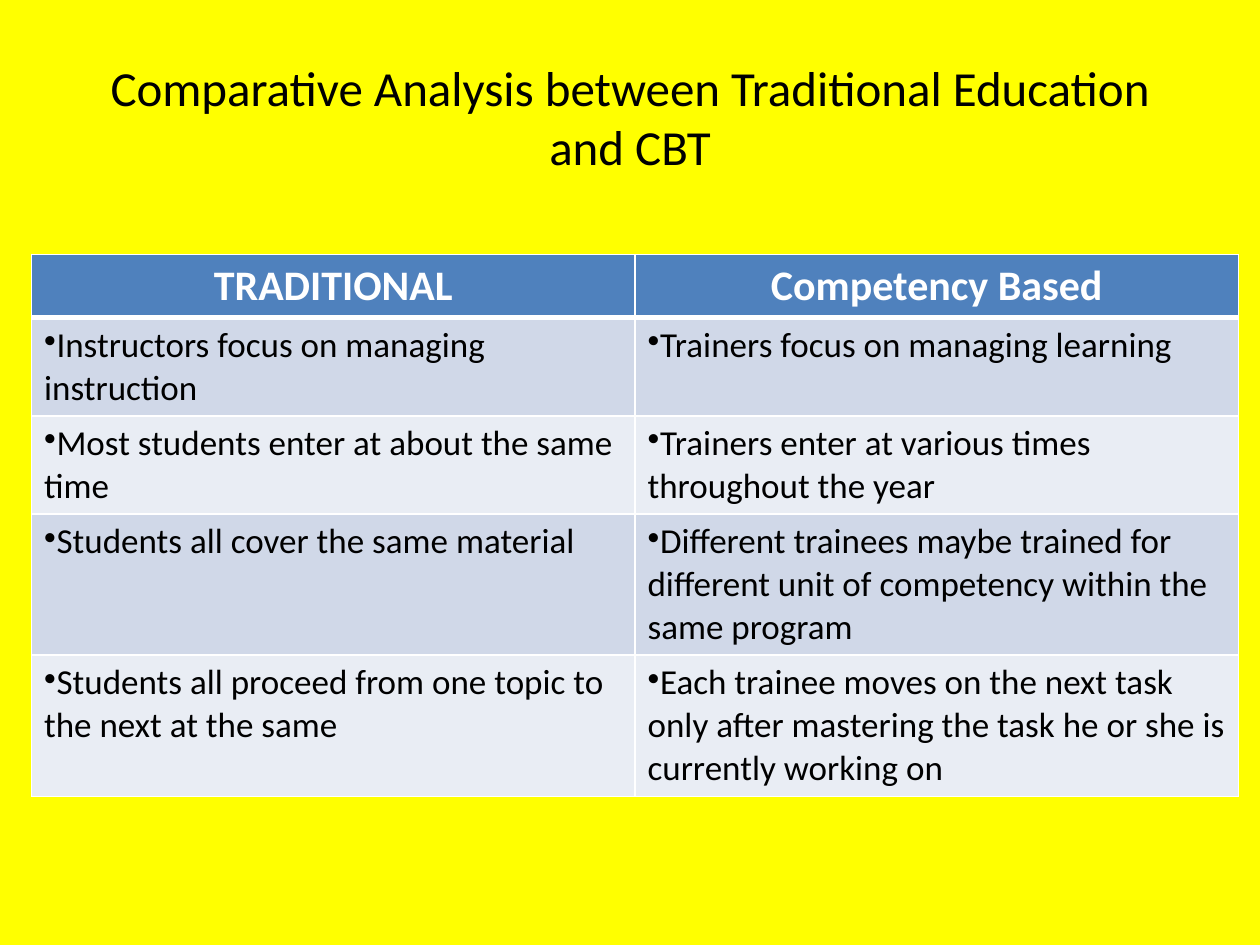
"""Build a slide comparing traditional education with competency based training."""
from lxml.etree import SubElement
from pptx import Presentation
from pptx.dml.color import RGBColor
from pptx.enum.text import MSO_ANCHOR, PP_ALIGN
from pptx.oxml.ns import qn
from pptx.util import Inches, Pt

TITLE = "Comparative Analysis between Traditional Education and CBT"
HEADINGS = ("TRADITIONAL", "Competency Based")
COMPARISONS = [
    ("Instructors focus on managing instruction",
     "Trainers focus on managing learning"),
    ("Most students enter at about the same time",
     "Trainers enter at various times throughout the year"),
    ("Students all cover the same material",
     "Different trainees maybe trained for different unit of competency within the same program"),
    ("Students all proceed from one topic to the next at the same",
     "Each trainee moves on the next task only after mastering the task he or she is currently working on"),
]
ROW_HEIGHTS = (0.5, 0.78, 0.78, 1.12, 1.12)
COLUMN_WIDTH = 4.79
YELLOW, BLACK, WHITE, BLUE = "FFFF00", "000000", "FFFFFF", "4F81BD"
BANDS = ("D0D8E8", "E9EDF4")


def paint(fill, color):
    fill.solid()
    fill.fore_color.rgb = RGBColor.from_string(color)


def write(paragraph, text, size, color, bold=False):
    run = paragraph.add_run()
    run.text = text
    run.font.name = "Calibri"
    run.font.size = Pt(size)
    run.font.bold = bold
    paint(run.font.fill, color)


def add_bullet(paragraph):
    properties = paragraph._p.get_or_add_pPr()
    properties.set("marL", "0")
    properties.set("indent", "0")
    SubElement(properties, qn("a:buChar"), char="•")


def add_borders(cell, top, bottom):
    properties = cell._tc.get_or_add_tcPr()
    for side, width in (("L", 1), ("R", 1), ("T", top), ("B", bottom)):
        line = SubElement(properties, qn(f"a:ln{side}"), w=str(Pt(width)))
        solid = SubElement(line, qn("a:solidFill"))
        SubElement(solid, qn("a:srgbClr"), val=WHITE)


def add_title(slide):
    frame = slide.shapes.add_textbox(Inches(0.5), Inches(0.3), Inches(9), Inches(1.25)).text_frame
    frame.word_wrap = True
    frame.vertical_anchor = MSO_ANCHOR.MIDDLE
    heading = frame.paragraphs[0]
    heading.alignment = PP_ALIGN.CENTER
    write(heading, TITLE, 28, BLACK)


def add_comparison(slide):
    rows = [HEADINGS, *COMPARISONS]
    table = slide.shapes.add_table(
        len(rows), len(HEADINGS), Inches(0.25), Inches(2.02),
        Inches(COLUMN_WIDTH * len(HEADINGS)), Inches(sum(ROW_HEIGHTS))).table
    for column in table.columns:
        column.width = Inches(COLUMN_WIDTH)
    for r, (texts, height) in enumerate(zip(rows, ROW_HEIGHTS)):
        table.rows[r].height = Inches(height)
        for c, text in enumerate(texts):
            cell = table.cell(r, c)
            add_borders(cell, top=3 if r == 1 else 1, bottom=3 if r == 0 else 1)
            paint(cell.fill, BANDS[(r - 1) % 2] if r else BLUE)
            paragraph = cell.text_frame.paragraphs[0]
            if r:
                add_bullet(paragraph)
                write(paragraph, text, 20, BLACK)
            else:
                paragraph.alignment = PP_ALIGN.CENTER
                write(paragraph, text, 24, WHITE, bold=True)


def main():
    deck = Presentation()
    deck.slide_width, deck.slide_height = Inches(10), Inches(7.5)
    slide = deck.slides.add_slide(deck.slide_layouts[6])
    paint(slide.background.fill, YELLOW)
    add_title(slide)
    add_comparison(slide)
    deck.save("out.pptx")


if __name__ == "__main__":
    main()
